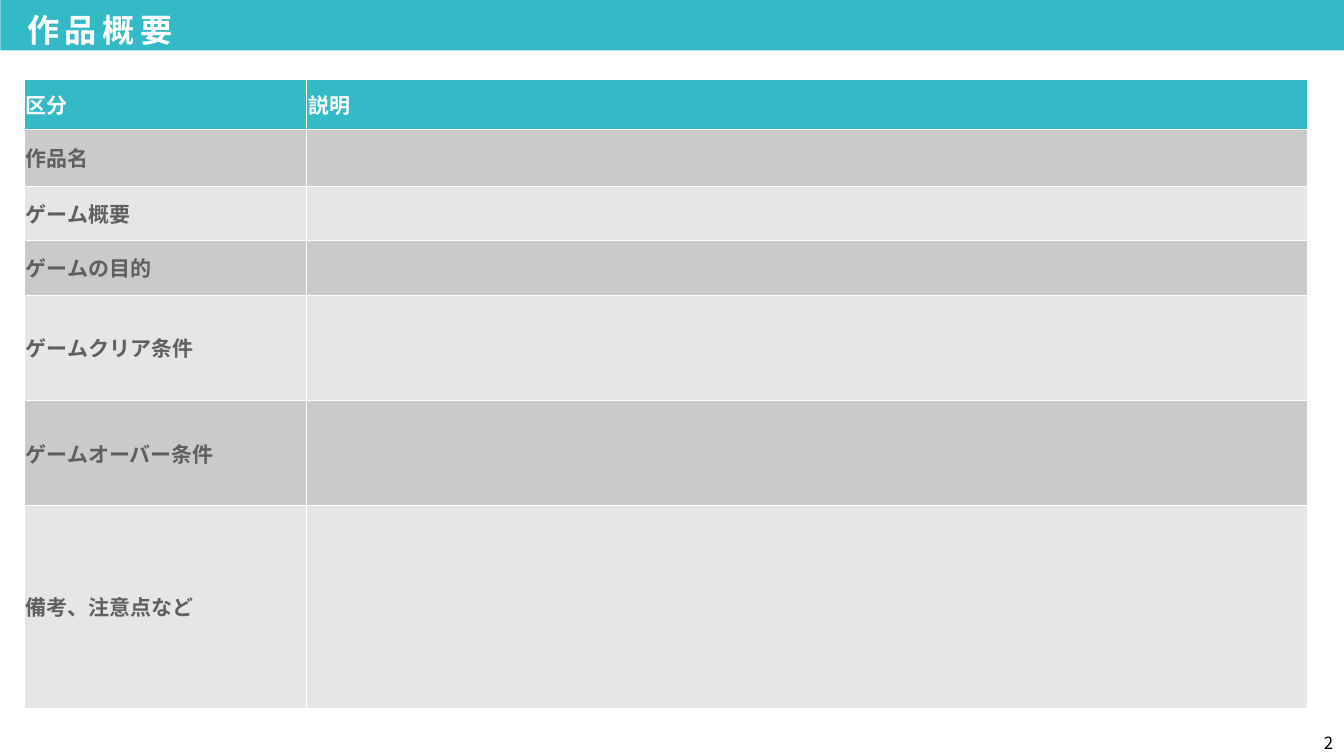
from dataclasses import dataclass

from lxml import etree
from pptx import Presentation
from pptx.dml.color import RGBColor
from pptx.enum import shapes, text
from pptx.oxml import ns
from pptx.util import Cm, Pt


@dataclass(frozen=True)
class Theme:
    font: str = "Noto Sans CJK JP"
    accent: str = "34B9C6"
    white: str = "FFFFFF"
    black: str = "000000"
    label: str = "5F5F5F"
    bands: tuple = ("CACACA", "E6E6E6")
    title_size: float = 46
    table_size: float = 30
    number_size: float = 24
    border_width: float = 0.25


THEME = Theme()
SLIDE_WIDTH, SLIDE_HEIGHT = 67.74, 38.1
HEADINGS = ("区分", "説明")
ITEMS = (
    ("作品名", 2.87),
    ("ゲーム概要", 2.74),
    ("ゲームの目的", 2.74),
    ("ゲームクリア条件", 5.31),
    ("ゲームオーバー条件", 5.31),
    ("備考、注意点など", 10.19),
)
HEADING_HEIGHT = 2.51
LABEL_SHARE = 0.22


def format_runs(paragraph, size, color, bold=False, spacing=None):
    for run in paragraph.runs:
        run.font.size = Pt(size)
        run.font.bold = bold
        run.font.color.rgb = RGBColor.from_string(color)
        run.font.name = THEME.font
        properties = run.font._element
        etree.SubElement(properties, ns.qn("a:ea"), typeface=THEME.font)
        if spacing:
            properties.set("spc", str(round(spacing * 100)))


def set_margins(target, margin):
    target.margin_left = target.margin_right = Cm(margin)
    target.margin_top = target.margin_bottom = Cm(margin)


def add_text(slide, box, content, margin, wrap):
    frame = slide.shapes.add_textbox(*map(Cm, box)).text_frame
    frame.text = content
    frame.word_wrap = wrap
    frame.vertical_anchor = text.MSO_ANCHOR.MIDDLE
    set_margins(frame, margin)
    return frame.paragraphs[0]


def add_title_bar(slide, left, top, width, height):
    bar = slide.shapes.add_shape(
        shapes.MSO_SHAPE.RECTANGLE, Cm(left), Cm(top), Cm(width), Cm(height)
    )
    bar.shadow.inherit = False
    bar.fill.solid()
    bar.fill.fore_color.rgb = RGBColor.from_string(THEME.accent)
    bar.line.fill.background()
    title = add_text(slide, (left + 1.17, top + 0.33, 8.03, 2.31), "作品概要", 0.18, True)
    format_runs(title, THEME.title_size, THEME.white, bold=True, spacing=7.9)


def add_borders(cell):
    properties = cell._tc.get_or_add_tcPr()
    for position, side in enumerate(("lnL", "lnR", "lnT", "lnB")):
        line = etree.Element(ns.qn(f"a:{side}"), w=str(Pt(THEME.border_width)))
        fill = etree.SubElement(line, ns.qn("a:solidFill"))
        etree.SubElement(fill, ns.qn("a:srgbClr"), val=THEME.white)
        properties.insert(position, line)


def fill_cell(cell, content, fill, color):
    cell.text = content
    cell.vertical_anchor = text.MSO_ANCHOR.MIDDLE
    set_margins(cell, 0.1)
    cell.fill.solid()
    cell.fill.fore_color.rgb = RGBColor.from_string(fill)
    add_borders(cell)
    format_runs(cell.text_frame.paragraphs[0], THEME.table_size, color, bold=True)


def add_overview_table(slide, left, top, width):
    rows = [(HEADINGS, HEADING_HEIGHT, THEME.accent, THEME.white)]
    for index, (label, height) in enumerate(ITEMS):
        rows.append(((label, ""), height, THEME.bands[index % 2], THEME.label))
    total_height = sum(height for _, height, _, _ in rows)
    table = slide.shapes.add_table(
        len(rows), len(HEADINGS), Cm(left), Cm(top), Cm(width), Cm(total_height)
    ).table
    for column, share in zip(table.columns, (LABEL_SHARE, 1 - LABEL_SHARE)):
        column.width = Cm(width * share)
    for row, (contents, height, fill, color) in zip(table.rows, rows):
        row.height = Cm(height)
        for cell, content in zip(row.cells, contents):
            fill_cell(cell, content, fill, color)


def add_page_number(slide, left, top, width, height):
    number = add_text(slide, (left, top, width, height), "2", 0.13, False)
    number.alignment = text.PP_ALIGN.RIGHT
    format_runs(number, THEME.number_size, THEME.black)


def main():
    presentation = Presentation()
    presentation.slide_width = Cm(SLIDE_WIDTH)
    presentation.slide_height = Cm(SLIDE_HEIGHT)
    slide = presentation.slides.add_slide(presentation.slide_layouts[6])
    add_title_bar(slide, 0.02, 0, SLIDE_WIDTH - 0.02, 2.54)
    add_overview_table(slide, 1.2, 4, 64.69)
    add_page_number(slide, 66.52, 36.78, 0.81, 1.3)
    presentation.save("out.pptx")


if __name__ == "__main__":
    main()
